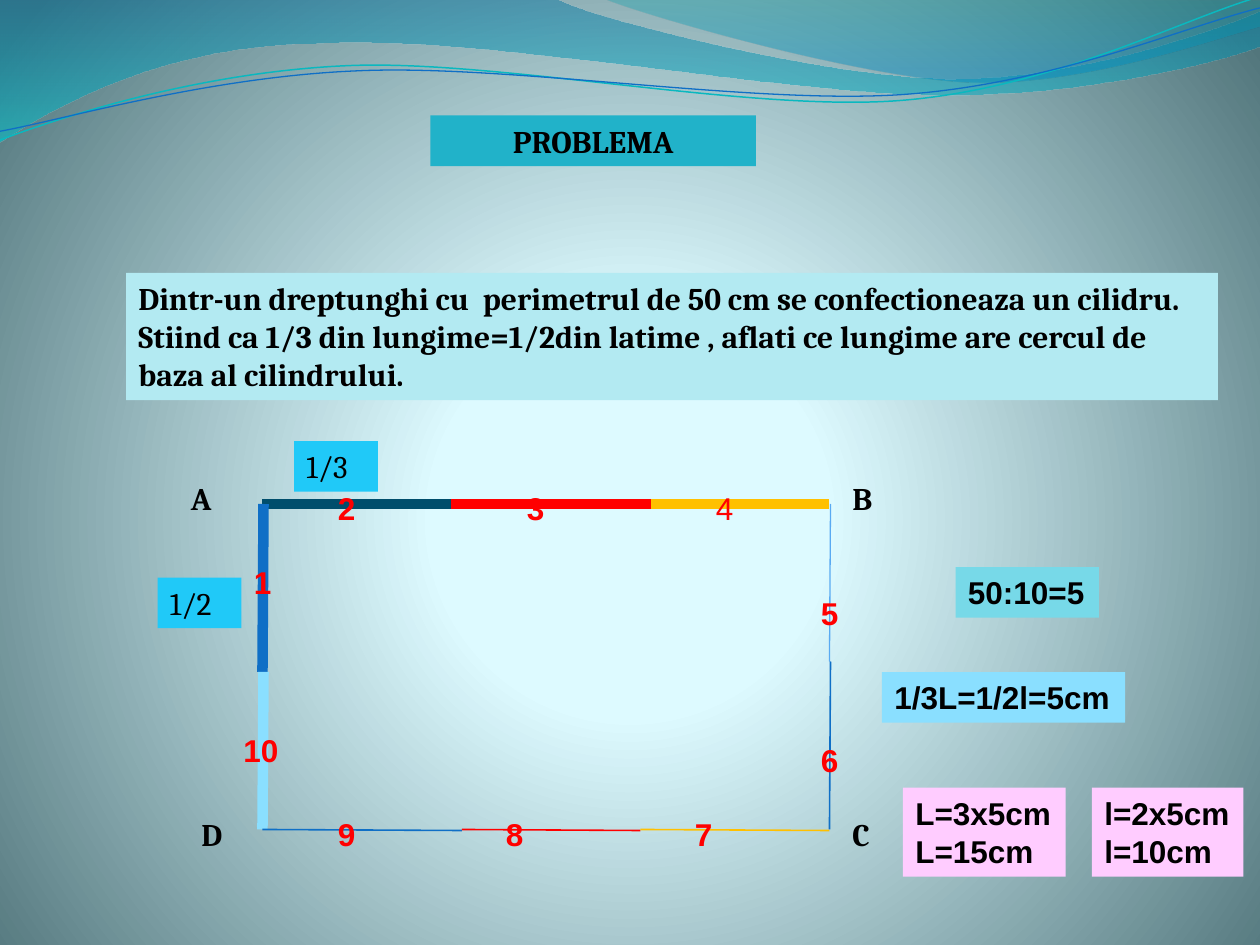
"""Builds the slide with a rectangle perimeter problem and its ten equal segments."""
import itertools

import lxml.etree
import pptx
import pptx.dml.color
import pptx.enum.shapes
import pptx.enum.text
import pptx.oxml.ns
import pptx.util

Pt = pptx.util.Pt
qn = pptx.oxml.ns.qn

COLORS = {
    "black": "000000", "red": "FF0000", "gold": "FFC000", "navy": "004E6C",
    "blue": "0F6FC6", "sky": "8ADFFF", "soft_blue": "59AAF2", "turquoise": "0AB8BF",
    "title": "21B2C9", "problem": "B3EAF2", "fraction": "20C9F8",
    "division": "77D9E8", "pink": "FFCCFF",
    "center": "DEFBFF", "middle": "DDFAFF", "edge": "52767C",
    "deep": "0074A1", "aqua": "00C6CF", "teal": "00A1A9", "ocean": "008BBF",
}
BACKGROUND = [(0, "center", 100), (25, "middle", 100), (100, "edge", 100)]
FILLED_WAVES = [
    ([[(0, -1)], [(317, -1)],
      [(343, 12), (478, 45), (546, 45)], [(614, 45), (690, 19), (720, 6.5)],
      [(721, 26)],
      [(708, 32), (626, 55), (537, 54)], [(448, 54), (275, 20), (185, 24.5)],
      [(93, 25), (33, 60), (-1, 81.5)], [(0, -1)]],
     [(0, "deep", 45), (100, "aqua", 55)]),
    ([[(345, -1)],
      [(366, 8), (491, 44.5), (554, 47)], [(616, 49.5), (692, 23), (720, 15)],
      [(720, 0)], [(345, -1)]],
     [(0, "teal", 30), (80, "ocean", 45)]),
]
LINE_WAVES = [
    ([[(0, 80)], [(34.5, 67), (114, 41), (199.5, 37.5)],
      [(284.5, 34), (427, 64), (513.5, 57.5)], [(600, 51), (675.5, 11), (718.5, -1.5)]],
     "turquoise", 0.85),
    ([[(0, 75)], [(34, 69), (118, 44), (204, 40.5)],
      [(290, 36.5), (430, 60), (516, 54)], [(602, 48), (677.5, 15), (720, 4.5)]],
     "blue", 0.75),
]

LEFT, TOP, RIGHT, BOTTOM = 150, 288, 474, 474
SLANT = 0.6
SEGMENTS = [
    (LEFT, TOP, 264, TOP, "navy", 6),
    (258, TOP, 372, TOP, "red", 6),
    (372, TOP, RIGHT, TOP, "gold", 6),
    (LEFT + SLANT, TOP, LEFT, 384, "blue", 6),
    (LEFT + SLANT, 384, LEFT, BOTTOM, "sky", 6),
    (LEFT, BOTTOM, 264, BOTTOM + SLANT, "blue", 0.9),
    (264, BOTTOM, 366, BOTTOM + SLANT, "red", 0.9),
    (366, BOTTOM, RIGHT, BOTTOM + SLANT, "gold", 0.9),
    (RIGHT + SLANT, TOP, RIGHT, 378, "soft_blue", 0.75),
    (RIGHT + SLANT, 378, RIGHT, BOTTOM, "blue", 0.9),
]

TITLE = ("PROBLEMA", 246, 66, 186)
PROBLEM = (
    "Dintr-un dreptunghi cu  perimetrul de 50 cm se confectioneaza un cilidru.\n"
    "Stiind ca 1/3 din lungime=1/2din latime , aflati ce lungime are cercul de "
    "baza al cilindrului.", 72, 156, 624)
FRACTIONS = [("1/3", 168, 252, 48), ("1/2", 90, 330, 48)]
CORNERS = [("A", 102, 270), ("B", 480, 270), ("C", 480, 462), ("D", 108, 462)]
NUMBERS = [
    ("1", 138, 318), ("2", 186, 276), ("3", 294, 276), ("4", 402, 276), ("5", 462, 336),
    ("6", 462, 420), ("7", 390, 462), ("8", 282, 462), ("9", 186, 462), ("10", 132, 414),
]
ANSWERS = [
    ("50:10=5", 546, 324, 82, "division"),
    ("1/3L=1/2l=5cm", 504, 384, 139, "sky"),
    ("L=3x5cm\nL=15cm", 516, 450, 93, "pink"),
    ("l=2x5cm\nl=10cm", 624, 450, 86.5, "pink"),
]


def rgb(name):
    return pptx.dml.color.RGBColor.from_string(COLORS[name])


def set_gradient(element, stops, circular=False):
    solid = element.find(".//" + qn("a:solidFill"))
    gradient = lxml.etree.Element(qn("a:gradFill"), rotWithShape="1")
    stop_list = lxml.etree.SubElement(gradient, qn("a:gsLst"))
    for position, name, alpha in stops:
        stop = lxml.etree.SubElement(stop_list, qn("a:gs"), pos=str(position * 1000))
        color = lxml.etree.SubElement(stop, qn("a:srgbClr"), val=COLORS[name])
        if alpha < 100:
            lxml.etree.SubElement(color, qn("a:alpha"), val=str(alpha * 1000))
    if circular:
        shade = lxml.etree.SubElement(gradient, qn("a:path"), path="circle")
        lxml.etree.SubElement(shade, qn("a:fillToRect"),
                              l="10000", t="110000", r="10000", b="100000")
    else:
        lxml.etree.SubElement(gradient, qn("a:lin"), ang="5400000", scaled="1")
    solid.getparent().replace(solid, gradient)


def add_wave(page, parts, closed):
    vertices = [(Pt(x), Pt(y)) for x, y in itertools.chain.from_iterable(parts)]
    builder = page.shapes.build_freeform(*vertices[0])
    builder.add_line_segments(vertices[1:], close=closed)
    wave = builder.convert_to_shape()
    wave.shadow.inherit = False
    lines = iter(list(wave.element.iter(qn("a:lnTo"))))
    for part in parts[1:]:
        group = list(itertools.islice(lines, len(part)))
        if len(group) == 3:
            curve = lxml.etree.Element(qn("a:cubicBezTo"))
            group[0].addprevious(curve)
            for line in group:
                curve.append(line[0])
                line.getparent().remove(line)
    return wave


def write(box, text, font, color="black", bold=True, wrap=True, centered=False):
    frame = box.text_frame
    frame.text = text
    frame.word_wrap = wrap
    frame.auto_size = pptx.enum.text.MSO_AUTO_SIZE.NONE
    frame.vertical_anchor = pptx.enum.text.MSO_ANCHOR.TOP
    align = pptx.enum.text.PP_ALIGN
    for para in frame.paragraphs:
        para.alignment = align.CENTER if centered else align.LEFT
        for span in para.runs:
            span.font.name = font
            span.font.size = Pt(18)
            span.font.bold = bold
            span.font.color.rgb = rgb(color)


def add_panel(page, text, left, top, width, height, fill, font, **style):
    panel = page.shapes.add_shape(pptx.enum.shapes.MSO_SHAPE.RECTANGLE,
                                  Pt(left), Pt(top), Pt(width), Pt(height))
    panel.shadow.inherit = False
    panel.fill.solid()
    panel.fill.fore_color.rgb = rgb(fill)
    panel.line.fill.background()
    write(panel, text, font, **style)


def add_label(page, text, left, top, width, font, **style):
    label = page.shapes.add_textbox(Pt(left), Pt(top), Pt(width), Pt(29))
    write(label, text, font, **style)


def main():
    deck = pptx.Presentation()
    deck.slide_width, deck.slide_height = Pt(720), Pt(540)
    page = deck.slides.add_slide(deck.slide_layouts[5])
    page.background.fill.solid()
    set_gradient(page.element, BACKGROUND, circular=True)

    for parts, stops in FILLED_WAVES:
        wave = add_wave(page, parts, True)
        wave.line.fill.background()
        wave.fill.solid()
        set_gradient(wave.element, stops)
    for parts, color, weight in LINE_WAVES:
        wave = add_wave(page, parts, False)
        wave.fill.background()
        wave.line.color.rgb = rgb(color)
        wave.line.width = Pt(weight)

    text, left, top, width = TITLE
    title = page.shapes.title
    title.left, title.top, title.width, title.height = Pt(left), Pt(top), Pt(width), Pt(29)
    title.fill.solid()
    title.fill.fore_color.rgb = rgb("title")
    write(title, text, "Cambria", centered=True)
    add_panel(page, *PROBLEM, 72.7, "problem", "Cambria")

    for x1, y1, x2, y2, color, weight in SEGMENTS:
        segment = page.shapes.add_connector(pptx.enum.shapes.MSO_CONNECTOR.STRAIGHT,
                                            Pt(x1), Pt(y1), Pt(x2), Pt(y2))
        segment.line.color.rgb = rgb(color)
        segment.line.width = Pt(weight)
        lxml.etree.SubElement(segment.element.spPr, qn("a:effectLst"))

    for fraction in FRACTIONS:
        add_panel(page, *fraction, 29, "fraction", "Cambria", bold=False)
    for corner in CORNERS:
        add_label(page, *corner, 30, "Cambria")
    for text, left, top in NUMBERS:
        add_label(page, text, left, top, 14.5 + 10 * len(text), "Arial",
                  color="red", bold=text != "4", wrap=len(text) > 2)
    for text, left, top, width, fill in ANSWERS:
        height = 29 + 22 * text.count("\n")
        add_panel(page, text, left, top, width, height, fill, "Arial", wrap=False)
    deck.save("out.pptx")


if __name__ == "__main__":
    main()
